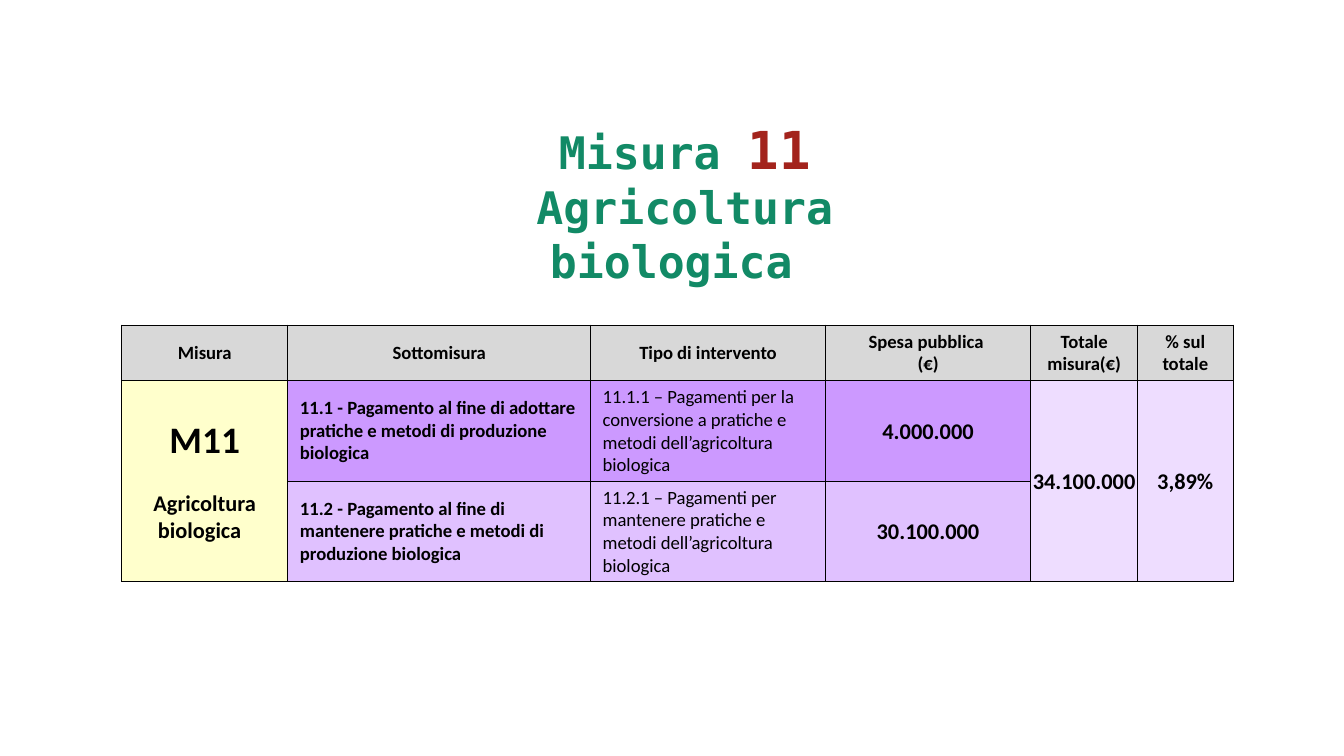
"""Build the slide on Misura 11, organic farming."""
from lxml import etree
from pptx import Presentation
from pptx import util as u
from pptx.dml.color import RGBColor
from pptx.enum import text
from pptx.oxml import ns

WIDTH = 10
HEIGHT = WIDTH * 9 / 16
COLOURS = {
    "green": "128A66", "red": "A3231C", "black": "000000",
    "header": "D8D8D8", "measure": "FFFFCC", "total": "EEDDFF",
    "conversion": "CC99FF", "maintenance": "E0C1FF",
}
COLUMNS = [12.37, 22.53, 17.47, 15.28, 7.95, 7.1]
ROWS = [6.6, 10.1, 8.4]
HEADERS = ["Misura", "Sottomisura", "Tipo di intervento",
           "Spesa pubblica \n(€)", "Totale misura(€)", "% sul totale"]
INTERVENTIONS = [
    ("conversion",
     "11.1 - Pagamento al fine di adottare pratiche e metodi di produzione biologica",
     "11.1.1 – Pagamenti per la conversione a pratiche e metodi dell’agricoltura biologica",
     "4.000.000"),
    ("maintenance",
     "11.2 - Pagamento al fine di mantenere pratiche e metodi di produzione biologica",
     "11.2.1 – Pagamenti per mantenere pratiche e metodi dell’agricoltura biologica",
     "30.100.000"),
]


def across(percent):
    """Return a percentage of the slide's width."""
    return u.Inches(WIDTH * percent / 100)


def down(percent):
    """Return a percentage of the slide's height."""
    return u.Inches(HEIGHT * percent / 100)


def colour(name):
    """Return a named colour."""
    return RGBColor.from_string(COLOURS[name])


def set_font(font, name, size, shade, bold=True):
    """Set the face, size, colour and weight of a font."""
    font.name, font.size, font.bold = name, u.Pt(size), bold
    font.color.rgb = colour(shade)


def set_margins(box, side, top, bottom):
    """Set the inner margins of a cell or text frame in inches."""
    box.margin_left = box.margin_right = u.Inches(side)
    box.margin_top, box.margin_bottom = u.Inches(top), u.Inches(bottom)


def add_title(page):
    """Fill the title placeholder with the two-paragraph heading."""
    title = page.shapes.title
    title.left, title.top = across(34), down(14.8)
    title.width, title.height = across(33.9), down(17.1)
    frame = title.text_frame
    frame.word_wrap = True
    frame.auto_size = text.MSO_AUTO_SIZE.SHAPE_TO_FIT_TEXT
    frame.vertical_anchor = text.MSO_ANCHOR.TOP
    set_margins(frame, 0.09, 0.04, 0.04)
    lines = [[("Misura ", 24, "green"), ("11", 28, "red")],
             [("Agricoltura biologica ", 24, "green")]]
    for index, line in enumerate(lines):
        para = frame.add_paragraph() if index else frame.paragraphs[0]
        para.alignment = text.PP_ALIGN.CENTER
        for words, size, shade in line:
            span = para.add_run()
            span.text = words
            set_font(span.font, "DejaVu Sans Mono", size, shade)


def add_borders(cell):
    """Draw thin black borders on all four sides of a cell."""
    properties = cell._tc.get_or_add_tcPr()
    for index, side in enumerate(("lnL", "lnR", "lnT", "lnB")):
        line = etree.Element(ns.qn("a:" + side), w=str(u.Pt(0.5)))
        fill = etree.SubElement(line, ns.qn("a:solidFill"))
        etree.SubElement(fill, ns.qn("a:srgbClr"), val=COLOURS["black"])
        properties.insert(index, line)


def write_cell(cell, words, shade, size=10, bold=True, centred=True, tight=False):
    """Fill a cell with coloured ground and uniformly set text."""
    cell.text = words
    cell.fill.solid()
    cell.fill.fore_color.rgb = colour(shade)
    cell.vertical_anchor = text.MSO_ANCHOR.MIDDLE
    set_margins(cell, *((0.01, 0.01, 0) if tight else (0.09, 0.04, 0.04)))
    for para in cell.text_frame.paragraphs:
        para.alignment = text.PP_ALIGN.CENTER if centred else text.PP_ALIGN.LEFT
        set_font(para.font, "Calibri", size, "black", bold)


def add_spending_table(page):
    """Add the table of sub-measures, interventions and spending."""
    frame = page.shapes.add_table(len(ROWS), len(COLUMNS), across(9.05), down(43),
                                  across(sum(COLUMNS)), down(33.6))
    table = frame.table
    for column, share in zip(table.columns, COLUMNS):
        column.width = across(share)
    for row, share in zip(table.rows, ROWS):
        row.height = down(share)
    for column, words in enumerate(HEADERS):
        write_cell(table.cell(0, column), words, "header")
    for row, (shade, measure, intervention, amount) in enumerate(INTERVENTIONS, 1):
        write_cell(table.cell(row, 1), measure, shade, centred=False)
        write_cell(table.cell(row, 2), intervention, shade, bold=False, centred=False)
        write_cell(table.cell(row, 3), amount, shade, 12, tight=True)
    for column in (0, 4, 5):
        table.cell(1, column).merge(table.cell(2, column))
    write_cell(table.cell(1, 0), "M11\nAgricoltura biologica  ", "measure", 12)
    code, name = table.cell(1, 0).text_frame.paragraphs
    code.font.size = u.Pt(20)
    name.space_before = u.Pt(14.6)
    write_cell(table.cell(1, 4), "34.100.000", "total", 12, tight=True)
    write_cell(table.cell(1, 5), "3,89%", "total", 12, tight=True)
    for cell in table.iter_cells():
        add_borders(cell)


def main():
    """Build and save the deck."""
    deck = Presentation()
    deck.slide_width, deck.slide_height = u.Inches(WIDTH), u.Inches(HEIGHT)
    page = deck.slides.add_slide(deck.slide_layouts.get_by_name("Title Only"))
    add_title(page)
    add_spending_table(page)
    deck.save("out.pptx")


if __name__ == "__main__":
    main()
